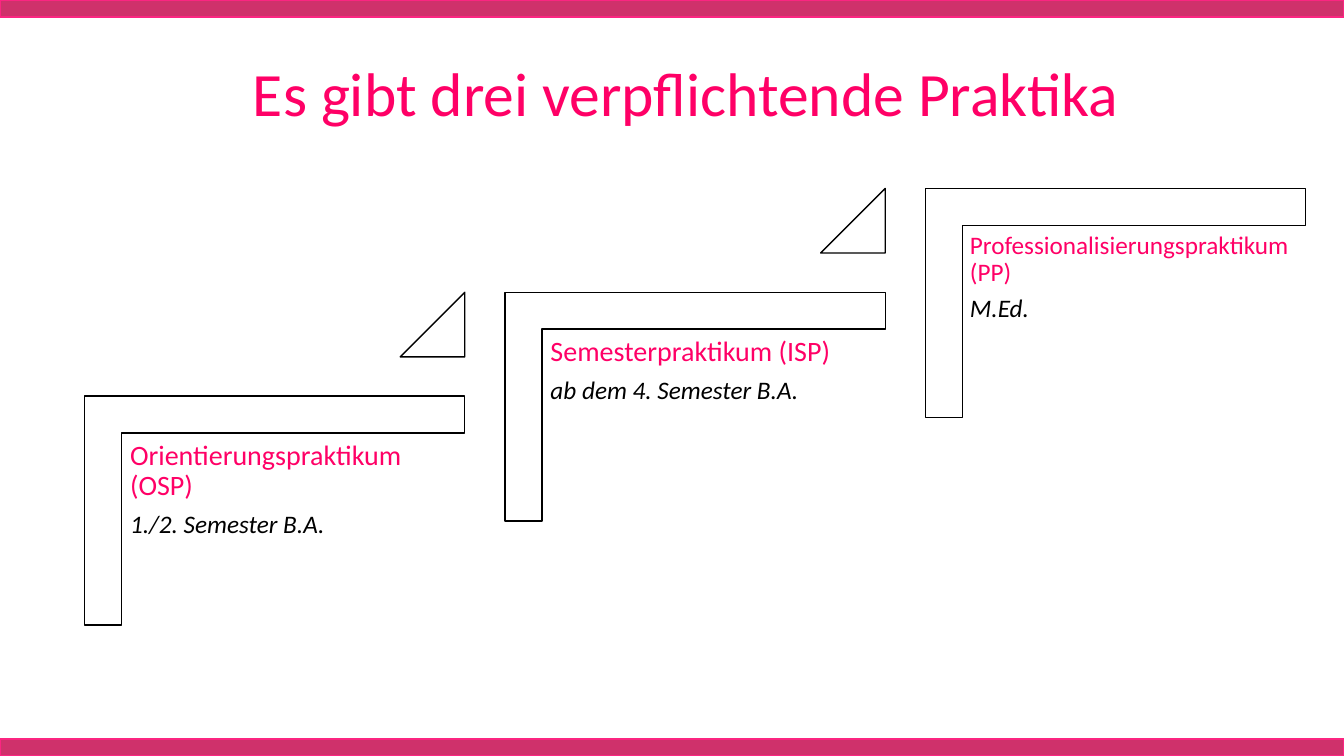
"""Build a slide showing three internships as rising steps."""
from pptx import Presentation
from pptx.dml.color import RGBColor
from pptx.enum.shapes import MSO_SHAPE
from pptx.enum.text import PP_ALIGN
from pptx.util import Inches, Pt

RECT, CORNER = MSO_SHAPE.RECTANGLE, MSO_SHAPE.CORNER
ANGLE = MSO_SHAPE.ISOSCELES_TRIANGLE
LEFT, CENTER = PP_ALIGN.LEFT, PP_ALIGN.CENTER
PINK, BLACK, WHITE = "FF0066", "000000", "FFFFFF"
BAND, EDGE = "CF316B", "FB2581"

TITLE = "Es gibt drei verpflichtende Praktika"
STEPS = [
    ("Orientierungspraktikum (OSP)", "1./2. Semester B.A.", 20, 0.08),
    ("Semesterpraktikum (ISP)", "ab dem 4. Semester B.A.", 20, 0.08),
    ("Professionalisierungspraktikum (PP)", "M.Ed.", 18, 0.07),
]
WIDE, HIGH, BAR = 13.33, 7.5, 0.17
START, BASE = 0.84, 3.93
RUN, RISE = 4.17, 1.03
LONG, TALL, THICK, TIP = 3.77, 2.27, 0.37, 0.64

deck = Presentation()
deck.slide_width, deck.slide_height = Inches(WIDE), Inches(HIGH)
slide = deck.slides.add_slide(deck.slide_layouts[6])


def color(code):
    return RGBColor.from_string(code)


def draw(kind, box, fill, line):
    shape = slide.shapes.add_shape(kind, *map(Inches, box))
    shape.shadow.inherit = False
    shape.fill.solid()
    shape.fill.fore_color.rgb = color(fill)
    shape.line.color.rgb = color(line)
    shape.line.width = Pt(1)
    return shape


def write(box, lines, side, top, align=LEFT):
    frame = slide.shapes.add_textbox(*map(Inches, box)).text_frame
    frame.word_wrap = True
    frame.margin_left = frame.margin_right = Inches(side)
    frame.margin_top = frame.margin_bottom = Inches(top)
    for i, (text, size, tint, slant, gap) in enumerate(lines):
        para = frame.add_paragraph() if i else frame.paragraphs[0]
        para.text = text
        para.alignment = align
        para.line_spacing = 0.9
        para.space_after = Pt(gap)
        font = para.font
        font.name, font.size, font.italic = "Calibri", Pt(size), slant
        font.color.rgb = color(tint)


for y in (0, HIGH - BAR):
    draw(RECT, (0, y, WIDE, BAR), BAND, EDGE)
write((1.46, 0.59, 10.69, 0.99), [(TITLE, 44, PINK, False, 0)],
      0.09, 0.04, CENTER)

for n, (name, term, size, inset) in enumerate(STEPS):
    x, y = START + n * RUN, BASE - n * RISE
    turn = (LONG - TALL) / 2
    stair = draw(CORNER, (x + turn, y - turn, TALL, LONG), WHITE, BLACK)
    stair.rotation = 90
    for side in range(2):
        stair.adjustments[side] = 0.161
    lines = [(name, size, PINK, False, size * 0.35),
             (term, 18, BLACK, True, 6.3)]
    write((x + THICK, y + THICK, 3.41, 2.99), lines, inset, inset)
    if n < len(STEPS) - 1:
        tip = draw(ANGLE, (x + LONG - TIP, y - RISE, TIP, TIP), WHITE, BLACK)
        tip.adjustments[0] = 1

deck.save("out.pptx")
